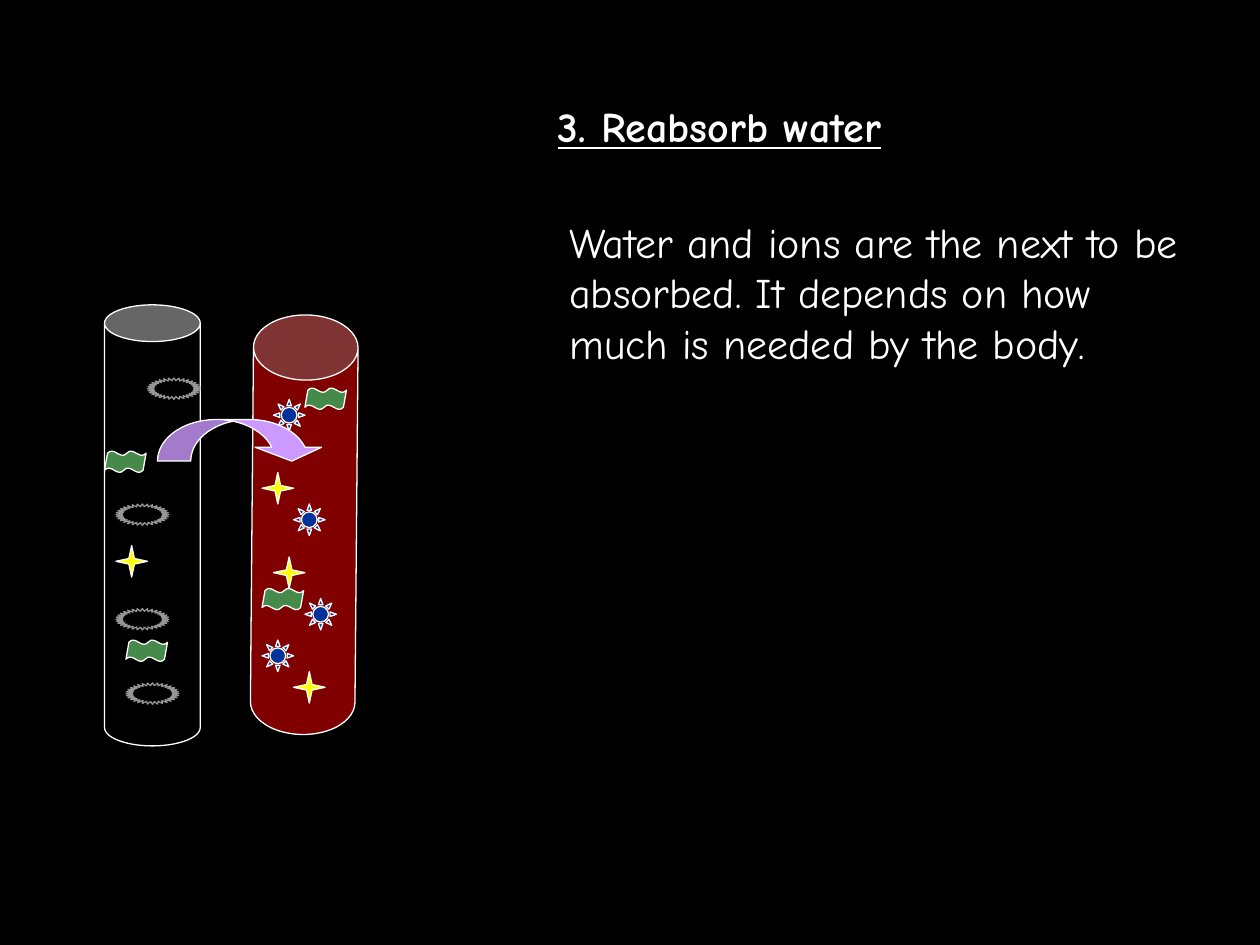
from lxml.etree import SubElement
from pptx import Presentation
from pptx.dml.color import RGBColor
from pptx.enum.shapes import MSO_SHAPE
from pptx.enum.text import MSO_AUTO_SIZE
from pptx.oxml.ns import qn
from pptx.util import Inches, Pt

THEME = {
    "font": "Comic Neue", "text_size": 24, "line_width": 0.75,
    "background": "000000", "white": "FFFFFF", "blood": "FF0000",
    "glucose": "FFFF00", "ion": "468A4B", "water": "003399",
    "waste": "969696", "arrow": "CC99FF",
}

# Content: text, position and emphasis
TEXTS = [
    ("3. Reabsorb water", (4.33, 0.75, 5.08, 0.5), True),
    ("Water and ions are the next to be absorbed. It depends on how much "
     "is needed by the body.", (4.42, 1.67, 5.08, 1.7), False),
]

# Particle styles: preset, size, adjustments, fill, line
PARTICLES = {
    "star": (MSO_SHAPE.STAR_4_POINT, (0.25, 0.25), [0.125], "glucose", "white"),
    "wave": (MSO_SHAPE.DOUBLE_WAVE, (0.33, 0.17), [0.103, -0.036], "ion", "white"),
    "ring": (MSO_SHAPE.STAR_32_POINT, (0.42, 0.17), [0.375], "background", "waste"),
    "sun": (MSO_SHAPE.SUN, (0.25, 0.25), [0.25], "water", "white"),
}

# Particle positions, from back to front
PLACES = [
    ("star", [(0.92, 4.33), (2.08, 3.75)]),
    ("wave", [(1, 5.08), (0.83, 3.58)]),
    ("ring", [(0.92, 4.83), (1, 5.42)]),
    ("wave", [(2.08, 4.67), (2.42, 3.08)]),
    ("sun", [(2.17, 3.17), (2.33, 4), (2.08, 5.08), (2.42, 4.75)]),
    ("ring", [(0.92, 4), (1.17, 3)]),
    ("star", [(2.17, 4.42), (2.33, 5.33)]),
]


def color(name):
    return RGBColor.from_string(THEME[name])


def add_figure(shapes, preset, box, adjustments, fill, line="white",
               rotation=0, opacity=None):
    shape = shapes.add_shape(preset, *map(Inches, box))
    shape.shadow.inherit = False
    shape.rotation = rotation
    for index, value in enumerate(adjustments):
        shape.adjustments[index] = value
    shape.fill.solid()
    shape.fill.fore_color.rgb = color(fill)
    if opacity is not None:
        fill_color = shape._element.spPr.find(qn("a:solidFill"))[0]
        SubElement(fill_color, qn("a:alpha"), val=str(opacity * 1000))
    shape.line.color.rgb = color(line)
    shape.line.width = Pt(THEME["line_width"])


def add_text(slide, text, box, heading=False):
    frame = slide.shapes.add_textbox(*map(Inches, box)).text_frame
    frame.word_wrap = True
    frame.auto_size = MSO_AUTO_SIZE.SHAPE_TO_FIT_TEXT
    run = frame.paragraphs[0].add_run()
    run.text = text
    run.font.name = THEME["font"]
    run.font.size = Pt(THEME["text_size"])
    run.font.color.rgb = color("white")
    run.font.bold = heading
    run.font.underline = heading


def main():
    presentation = Presentation()
    presentation.slide_width = Inches(10)
    presentation.slide_height = Inches(7.5)
    slide = presentation.slides.add_slide(presentation.slide_layouts[6])
    slide.background.fill.solid()
    slide.background.fill.fore_color.rgb = color("background")

    # Tubule and blood vessel
    shapes = slide.shapes.add_group_shape().shapes
    add_figure(shapes, MSO_SHAPE.CAN, (0.83, 2.42, 0.76, 3.5), [0.383], "background")
    add_figure(shapes, MSO_SHAPE.CAN, (2, 2.5, 0.83, 3.33), [0.623], "blood",
               rotation=0.5, opacity=50)

    # Particles
    for kind, positions in PLACES:
        preset, size, adjustments, fill, line = PARTICLES[kind]
        for position in positions:
            add_figure(shapes, preset, position + size, adjustments, fill, line)

    # Reabsorption arrow
    add_figure(shapes, MSO_SHAPE.CURVED_DOWN_ARROW, (1.25, 3.33, 1.33, 0.33),
               [0.8, 1.6, 0.333], "arrow")

    # Heading and explanation
    for text, box, heading in TEXTS:
        add_text(slide, text, box, heading=heading)

    presentation.save("out.pptx")


if __name__ == "__main__":
    main()
